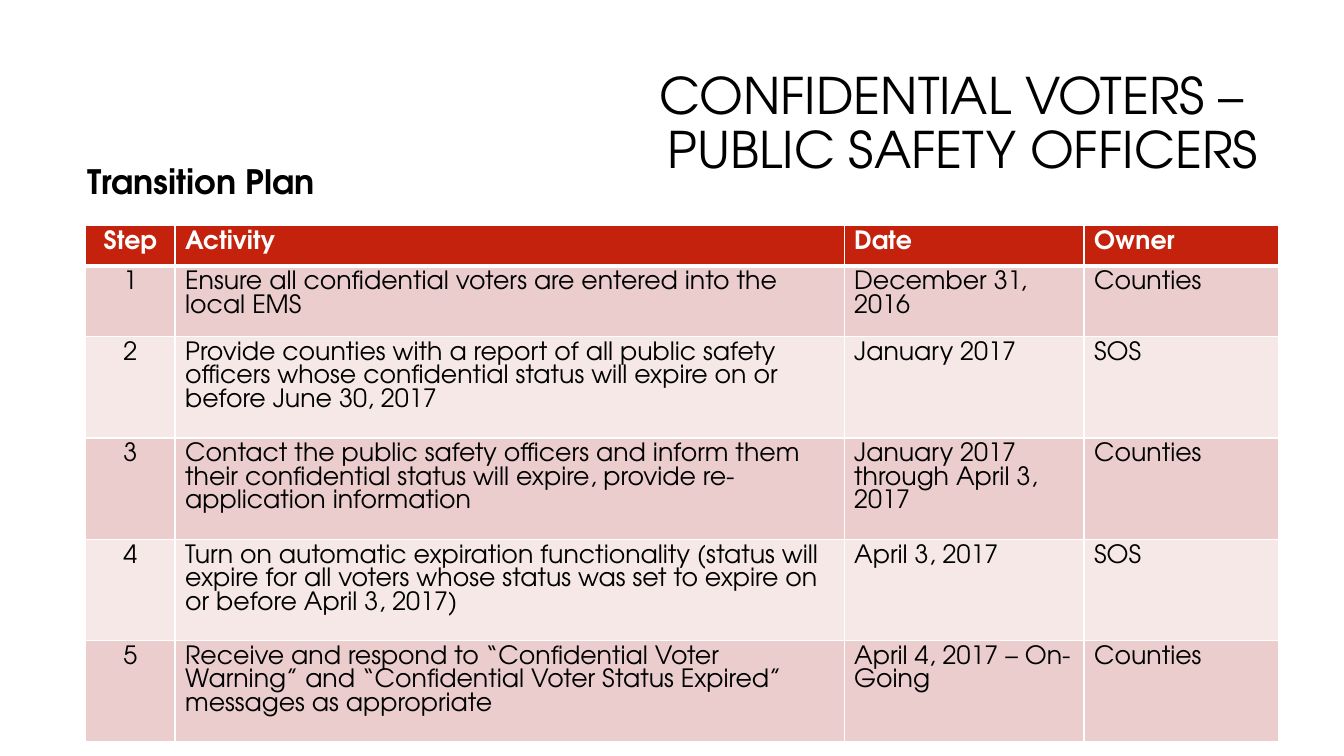
from lxml.etree import SubElement
from pptx import Presentation
from pptx.dml.color import RGBColor
from pptx.enum.text import MSO_ANCHOR, MSO_AUTO_SIZE, PP_ALIGN
from pptx.oxml.ns import qn
from pptx.util import Inches, Pt

BLACK = RGBColor(0x00, 0x00, 0x00)
WHITE = RGBColor(0xFF, 0xFF, 0xFF)
RED = RGBColor(0xC4, 0x22, 0x0D)
ROSE = RGBColor(0xEA, 0xCD, 0xCC)
PALE_ROSE = RGBColor(0xF5, 0xE8, 0xE7)

FONT = "TeX Gyre Adventor"
TITLE_ONLY = 5

# Column widths and row heights, in percent of the slide
COLUMNS = [6.65, 49.78, 17.85, 14.48]
ROWS = [5.3, 9.3] + [13.4] * 4
PLAN = [
    ("Step", "Activity", "Date", "Owner"),
    ("1", "Ensure all confidential voters are entered into the local EMS",
     "December 31, 2016", "Counties"),
    ("2", "Provide counties with a report of all public safety officers whose "
     "confidential status will expire on or before June 30, 2017",
     "January 2017", "SOS"),
    ("3", "Contact the public safety officers and inform them their confidential "
     "status will expire, provide re-application information",
     "January 2017 through April 3, 2017", "Counties"),
    ("4", "Turn on automatic expiration functionality (status will expire for all "
     "voters whose status was set to expire on or before April 3, 2017)",
     "April 3, 2017", "SOS"),
    ("5", "Receive and respond to “Confidential Voter Warning” and “Confidential "
     "Voter Status Expired” messages as appropriate",
     "April 4, 2017 – On-Going", "Counties"),
]


def write(tf, text, size=18, color=BLACK, bold=False, align=PP_ALIGN.LEFT, spacing=1.0):
    """Fill the first paragraph of a text frame with formatted text."""
    p = tf.paragraphs[0]
    p.text = text
    p.alignment = align
    p.line_spacing = spacing
    for r in p.runs:
        r.font.name = FONT
        r.font.size = Pt(size)
        r.font.bold = bold
        r.font.color.rgb = color


def set_borders(cell, top=1, bottom=1):
    """Draw white cell borders; widths are in points."""
    tc_pr = cell._tc.get_or_add_tcPr()
    widths = {"a:lnL": 1, "a:lnR": 1, "a:lnT": top, "a:lnB": bottom}
    for i, (tag, width) in enumerate(widths.items()):
        ln = SubElement(tc_pr, qn(tag), w=str(Pt(width)))
        fill = SubElement(ln, qn("a:solidFill"))
        SubElement(fill, qn("a:srgbClr"), val=str(WHITE))
        tc_pr.insert(i, ln)


class SlideBuilder:
    """Places elements on a grid of 100 columns by 100 rows."""

    def __init__(self, prs):
        self.col = prs.slide_width / 100
        self.row = prs.slide_height / 100
        self.slide = prs.slides.add_slide(prs.slide_layouts[TITLE_ONLY])

    def box(self, x, y, w, h):
        return (round(x * self.col), round(y * self.row),
                round(w * self.col), round(h * self.row))

    def title(self, text, *area):
        sp = self.slide.shapes.title
        sp.left, sp.top, sp.width, sp.height = self.box(*area)
        tf = sp.text_frame
        tf.word_wrap = True
        tf.auto_size = MSO_AUTO_SIZE.NONE
        tf.vertical_anchor = MSO_ANCHOR.TOP
        tf.margin_top = 0
        write(tf, text, size=36, align=PP_ALIGN.RIGHT, spacing=0.9)

    def heading(self, text, *area):
        tf = self.slide.shapes.add_textbox(*self.box(*area)).text_frame
        tf.word_wrap = False
        tf.auto_size = MSO_AUTO_SIZE.SHAPE_TO_FIT_TEXT
        write(tf, text, size=24, bold=True)

    def table(self, data, x, y, columns, rows):
        area = self.box(x, y, sum(columns), sum(rows))
        table = self.slide.shapes.add_table(len(rows), len(columns), *area).table
        for column, width in zip(table.columns, columns):
            column.width = round(width * self.col)
        for i, (row, height) in enumerate(zip(table.rows, rows)):
            row.height = round(height * self.row)
            header = i == 0
            fill = RED if header else (ROSE if i % 2 else PALE_ROSE)
            for j, cell in enumerate(row.cells):
                cell.fill.solid()
                cell.fill.fore_color.rgb = fill
                set_borders(cell, top=3 if i == 1 else 1, bottom=3 if header else 1)
                write(cell.text_frame, data[i][j], bold=header,
                      color=WHITE if header else BLACK,
                      align=PP_ALIGN.LEFT if j else PP_ALIGN.CENTER)


def main():
    prs = Presentation()
    prs.slide_width, prs.slide_height = Inches(13.33), Inches(7.5)
    s = SlideBuilder(prs)

    # Title and subheading
    s.title("CONFIDENTIAL VOTERS – \vPUBLIC SAFETY OFFICERS", 23.68, 9.33, 70.67, 20.13)
    s.heading("Transition Plan", 5.78, 20.63, 18.68, 6.67)

    # Transition steps
    s.table(PLAN, 6.38, 29.87, COLUMNS, ROWS)

    prs.save("out.pptx")


if __name__ == "__main__":
    main()
